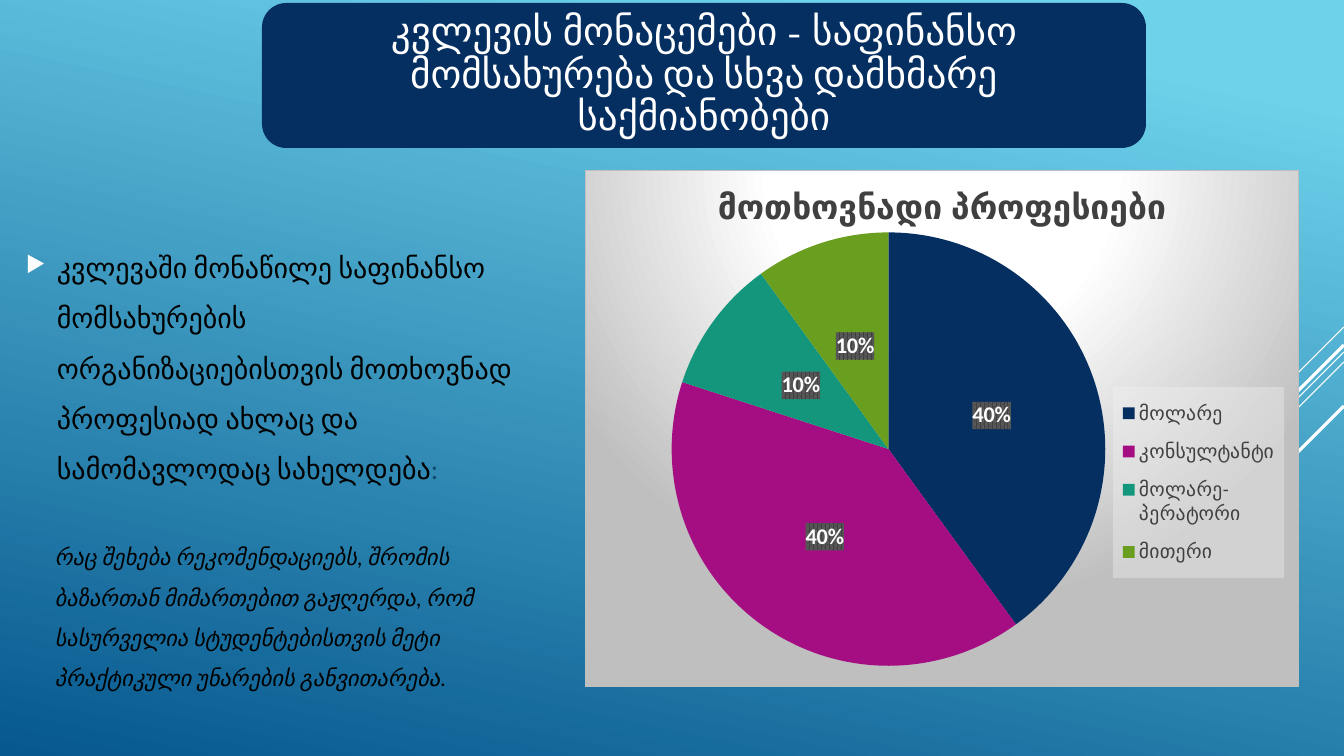
from lxml import etree
from pptx import Presentation
from pptx import util as u
from pptx.chart.data import CategoryChartData
from pptx.dml.color import RGBColor
from pptx.enum import chart as charts, shapes, text
from pptx.oxml import parse_xml
from pptx.oxml.ns import nsdecls, qn

EMU_PER_PX = 914400 / 100.8
WIDTH, HEIGHT = 1344, 756

WHITE = RGBColor(0xFF, 0xFF, 0xFF)
BLACK = RGBColor(0x00, 0x00, 0x00)
SKY = RGBColor(0x6E, 0xD2, 0xEB)
DEEP_BLUE = RGBColor(0x06, 0x58, 0x8E)
NAVY = RGBColor(0x05, 0x2F, 0x61)
COLON_BLUE = RGBColor(0x0F, 0x49, 0x6F)
CHARCOAL = RGBColor(0x40, 0x40, 0x40)
GRAPHITE = RGBColor(0x59, 0x59, 0x59)
PALE = RGBColor(0xF2, 0xF2, 0xF2)
SILVER = RGBColor(0xBF, 0xBF, 0xBF)
SLICES = [NAVY, RGBColor(0xA5, 0x0E, 0x82), RGBColor(0x14, 0x96, 0x7C),
          RGBColor(0x6A, 0x9E, 0x1F)]

HEADING_FONT = "League Spartan"
BODY_FONT = "Calibri"

CHART_TITLE = "მოთხოვნადი პროფესიები"
PROFESSIONS = {"მოლარე": 40, "კონსულტანტი": 40, "მოლარე-პერატორი": 10, "მითერი": 10}

# Diagonal rays from the right edge: start y, run to the lower left, width in points
RAYS = [(327, 101, 0.75), (352, 329, 0.75), (362, 209, 0.75),
        (345, 193, 2.25), (406, 140, 2.25)]


def px(length):
    return u.Emu(round(length * EMU_PER_PX))


def place(*box):
    return [px(length) for length in box]


def set_font(font, size, color, name=BODY_FONT, bold=None, italic=None):
    font.size, font.name, font.bold, font.italic = u.Pt(size), name, bold, italic
    font.color.rgb = color


def add_background(slide):
    fill = slide.background.fill
    fill.gradient()
    fill.gradient_angle = 258
    for stop, position, color in zip(fill.gradient_stops, (0.1, 1), (SKY, DEEP_BLUE)):
        stop.position = position
        stop.color.rgb = color
    for top, run, width in RAYS:
        ray = slide.shapes.add_connector(
            shapes.MSO_CONNECTOR.STRAIGHT,
            *place(WIDTH, top, WIDTH - run, top + run))
        ray.line.color.rgb = WHITE
        ray.line.width = u.Pt(width)
        etree.SubElement(ray._element.spPr, qn("a:effectLst"))


def add_title(slide, left, top, width, height):
    banner = slide.shapes.add_shape(shapes.MSO_SHAPE.ROUNDED_RECTANGLE,
                                    *place(left, top, width, height))
    banner.shadow.inherit = False
    banner.fill.solid()
    banner.fill.fore_color.rgb = NAVY
    banner.line.fill.background()

    title = slide.shapes.title
    banner._element.addnext(title._element)
    inset = 7
    title.left, title.top, title.width, title.height = place(
        left + inset, top + inset, width - 2 * inset, height - 2 * inset)
    frame = title.text_frame
    frame.auto_size = text.MSO_AUTO_SIZE.NONE
    frame.vertical_anchor = text.MSO_ANCHOR.MIDDLE
    frame.margin_left = frame.margin_right = frame.margin_top = frame.margin_bottom = px(12)
    paragraph = frame.paragraphs[0]
    paragraph.alignment = text.PP_ALIGN.CENTER
    paragraph.line_spacing = 0.9
    for words, font_name in (
            ("კვლევის მონაცემები - ", HEADING_FONT),
            ("საფინანსო მომსახურება და სხვა დამხმარე საქმიანობები", BODY_FONT)):
        run = paragraph.add_run()
        run.text = words
        set_font(run.font, 28, WHITE, font_name)


def add_text(slide, *box):
    """Add a wrapping text box and return its frame and first paragraph."""
    frame = slide.shapes.add_textbox(*place(*box)).text_frame
    frame.word_wrap = True
    paragraph = frame.paragraphs[0]
    paragraph.line_spacing = 1.5
    return frame, paragraph


def add_finding(slide, *box):
    frame, paragraph = add_text(slide, *box)
    frame.vertical_anchor = text.MSO_ANCHOR.MIDDLE
    paragraph.space_before, paragraph.space_after = u.Pt(4), u.Pt(6)
    for words, color in (
            ("კვლევაში მონაწილე საფინანსო მომსახურების ორგანიზაციებისთვის "
             "მოთხოვნად პროფესიად ახლაც და სამომავლოდაც სახელდება", BLACK),
            (":", COLON_BLUE)):
        run = paragraph.add_run()
        run.text = words
        set_font(run.font, 20, color)
    properties = paragraph._p.get_or_add_pPr()
    indent = px(31)
    properties.set("marL", str(indent))
    properties.set("indent", str(-indent))
    bullet_color = etree.SubElement(properties, qn("a:buClr"))
    etree.SubElement(bullet_color, qn("a:srgbClr"), val=str(WHITE))
    etree.SubElement(properties, qn("a:buSzPct"), val="80000")
    etree.SubElement(properties, qn("a:buChar"), char="▶")


def add_recommendation(slide, *box):
    frame, paragraph = add_text(slide, *box)
    frame.auto_size = text.MSO_AUTO_SIZE.SHAPE_TO_FIT_TEXT
    paragraph.space_after = u.Pt(8)
    paragraph.text = ("რაც შეხება რეკომენდაციებს, შრომის ბაზართან მიმართებით გაჟღერდა, "
                      "რომ სასურველია სტუდენტებისთვის მეტი პრაქტიკული უნარების განვითარება.")
    set_font(paragraph.font, 16, BLACK, italic=True)


def chart_fill(content):
    return parse_xml(f'<c:spPr {nsdecls("c", "a")}>{content}</c:spPr>')


def solid(color, inner=""):
    return f'<a:srgbClr val="{color}">{inner}</a:srgbClr>'


def manual_layout(x, y, width, height, inner=False):
    target = '<c:layoutTarget val="inner"/>' if inner else ""
    return parse_xml(
        f'<c:layout {nsdecls("c")}><c:manualLayout>{target}'
        '<c:xMode val="edge"/><c:yMode val="edge"/>'
        f'<c:x val="{x}"/><c:y val="{y}"/><c:w val="{width}"/><c:h val="{height}"/>'
        '</c:manualLayout></c:layout>')


def style_chart_area(chart):
    stops = "".join(f'<a:gs pos="{position}">{solid(color)}</a:gs>' for position, color in
                    ((0, WHITE), (39000, WHITE), (100000, SILVER)))
    area = chart_fill(
        f'<a:gradFill><a:gsLst>{stops}</a:gsLst><a:path path="circle">'
        '<a:fillToRect l="50000" t="-80000" r="50000" b="180000"/></a:path></a:gradFill>'
        f'<a:ln w="9525"><a:solidFill>{solid(SILVER)}</a:solidFill></a:ln>')
    chart._chartSpace.find(qn("c:chart")).addnext(area)
    plot_area = chart._chartSpace.find(".//" + qn("c:plotArea"))
    for layout in plot_area.findall(qn("c:layout")):
        plot_area.remove(layout)
    plot_area.insert(0, manual_layout(0.11, 0.12, 0.63, 0.84, inner=True))


def style_legend(chart):
    chart.has_legend = True
    legend = chart.legend
    legend.position = charts.XL_LEGEND_POSITION.RIGHT
    legend.include_in_layout = False
    set_font(legend.font, 14, CHARCOAL)
    element = legend._element
    for layout in element.findall(qn("c:layout")):
        element.remove(layout)
    element.find(qn("c:legendPos")).addnext(manual_layout(0.74, 0.42, 0.24, 0.37))
    element.find(qn("c:txPr")).addprevious(chart_fill(
        f'<a:solidFill>{solid(PALE, "<a:alpha val=%r/>" % "39000")}</a:solidFill>'))


def style_labels(plot):
    plot.has_data_labels = True
    labels = plot.data_labels
    labels.show_percentage, labels.show_value = True, False
    labels.position = charts.XL_LABEL_POSITION.CENTER
    set_font(labels.font, 16, WHITE, bold=True)
    labels._element.find(qn("c:txPr")).addprevious(chart_fill(
        f'<a:pattFill prst="pct75"><a:fgClr>{solid(CHARCOAL)}</a:fgClr>'
        f'<a:bgClr>{solid(GRAPHITE)}</a:bgClr></a:pattFill>'))


def add_professions_chart(slide, *box):
    data = CategoryChartData()
    data.categories = list(PROFESSIONS)
    data.add_series(CHART_TITLE, list(PROFESSIONS.values()))
    chart = slide.shapes.add_chart(charts.XL_CHART_TYPE.PIE, *place(*box), data).chart
    set_font(chart.font, 10, WHITE, HEADING_FONT)
    chart.has_title = True
    heading = chart.chart_title.text_frame
    heading.text = CHART_TITLE
    set_font(heading.paragraphs[0].font, 24, CHARCOAL, HEADING_FONT, bold=True)
    plot = chart.plots[0]
    plot.vary_by_categories = True
    for index, color in enumerate(SLICES):
        slice_fill = plot.series[0].points[index].format.fill
        slice_fill.solid()
        slice_fill.fore_color.rgb = color
    style_chart_area(chart)
    style_legend(chart)
    style_labels(plot)


def main():
    presentation = Presentation()
    presentation.slide_width, presentation.slide_height = place(WIDTH, HEIGHT)
    slide = presentation.slides.add_slide(presentation.slide_layouts[5])
    add_background(slide)
    add_title(slide, 262, 3, 884, 145)
    add_finding(slide, 16, 228, 529, 263)
    add_professions_chart(slide, 585, 170, 714, 517)
    add_recommendation(slide, 45, 525, 488, 169)
    presentation.save("out.pptx")


if __name__ == "__main__":
    main()
